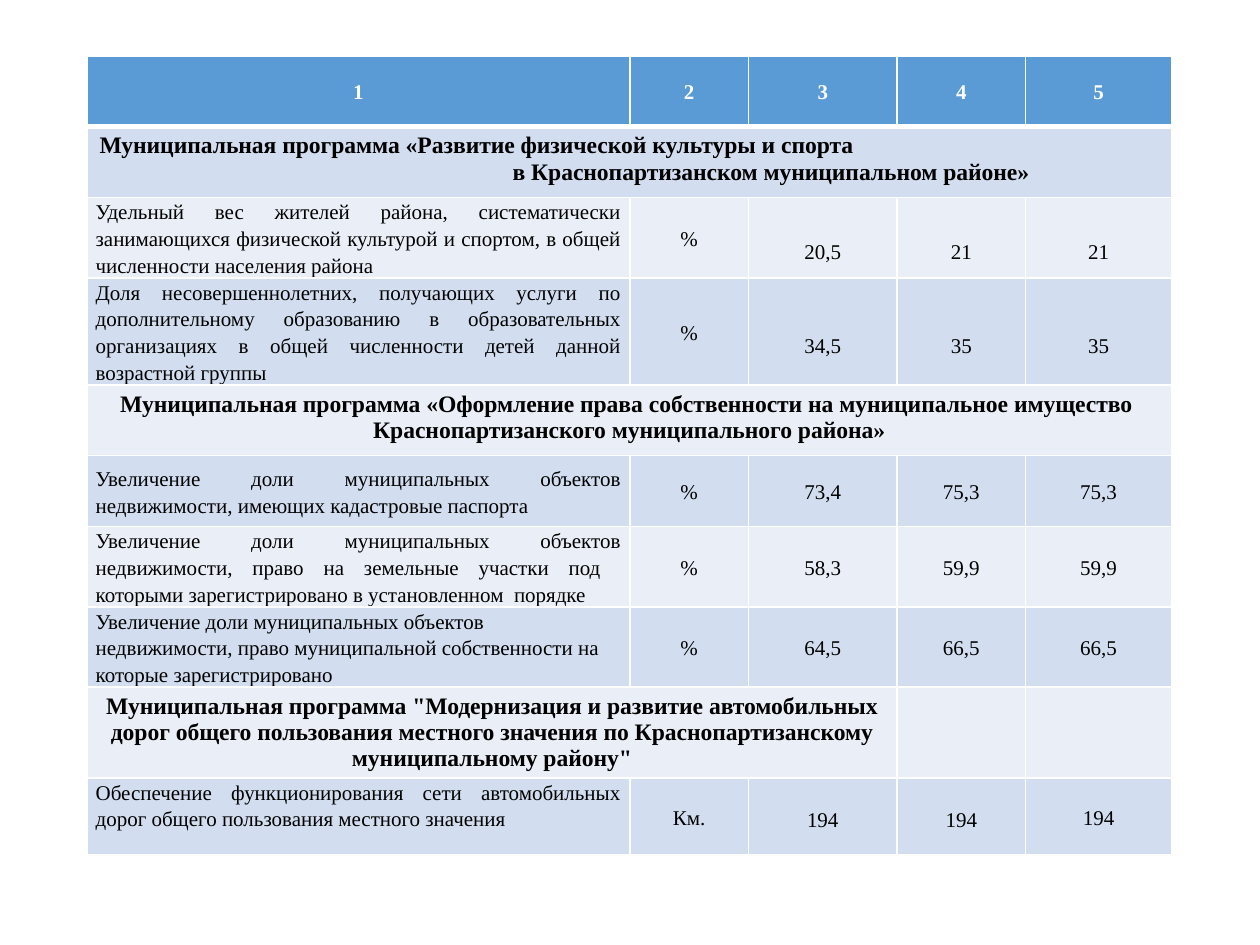
import pptx
import pptx.dml.color
import pptx.enum.text
import pptx.oxml.ns
import pptx.util
from lxml import etree

Pt = pptx.util.Pt
ALIGN = pptx.enum.text.PP_ALIGN
ANCHOR = pptx.enum.text.MSO_ANCHOR
LEFT, CENTER, JUST = ALIGN.LEFT, ALIGN.CENTER, ALIGN.JUSTIFY
TOP, MID = ANCHOR.TOP, ANCHOR.MIDDLE

WIDTHS = [310.3, 67.7, 85, 73.4, 83.5]
HIGH, LAST = 40.4, 44
DROP = 15.4
HEAD, DARK, LIGHT = "5B9BD5", "D2DEEF", "EAEFF7"

ROWS = [
    ("title", ["Муниципальная программа «Развитие физической культуры и спорта",
               "в Краснопартизанском муниципальном районе»"], 5, LEFT),
    ("data", ["Удельный вес жителей района, систематически занимающихся физической "
              "культурой и спортом, в общей численности населения района",
              "%", "20,5", "21", "21"], DROP, JUST),
    ("data", ["Доля несовершеннолетних, получающих услуги по дополнительному "
              "образованию в образовательных организациях в общей численности "
              "детей данной возрастной группы",
              "%", "34,5", "35", "35"], DROP, JUST),
    ("title", ["Муниципальная программа «Оформление права собственности на "
               "муниципальное имущество  Краснопартизанского муниципального района»"],
     5, CENTER),
    ("data", ["Увеличение доли муниципальных объектов недвижимости, имеющих "
              "кадастровые паспорта", "%", "73,4", "75,3", "75,3"], 0, JUST),
    ("data", ["Увеличение доли муниципальных объектов недвижимости, право на "
              "земельные участки под  которыми зарегистрировано в "
              "установленном  порядке", "%", "58,3", "59,9", "59,9"], 0, JUST),
    ("data", ["Увеличение доли муниципальных объектов недвижимости, право "
              "муниципальной собственности на которые зарегистрировано",
              "%", "64,5", "66,5", "66,5"], 0, LEFT),
    ("title", ["Муниципальная программа \"Модернизация и развитие автомобильных "
               "дорог общего пользования местного значения по Краснопартизанскому "
               "муниципальному району\""], 3, CENTER),
    ("data", ["Обеспечение функционирования сети автомобильных дорог общего "
              "пользования местного значения", "Км.", "194", "194", "194"], 0, JUST),
]


def paint(color):
    """Turn a hex string into a colour."""
    return pptx.dml.color.RGBColor.from_string(color)


def write(frame, lines, size=12, color="000000", bold=False, align=CENTER,
          space=1.15, shift=0):
    """Fill a text frame, indenting each line after the first by shift."""
    for num, line in enumerate(lines):
        para = frame.paragraphs[0] if num == 0 else frame.add_paragraph()
        para.alignment, para.line_spacing = align, space
        if num and shift:
            para._p.get_or_add_pPr().set("marL", str(Pt(shift)))
        run = para.add_run()
        run.text = line
        font = run.font
        font.name, font.size, font.bold = "Times New Roman", Pt(size), bold
        font.color.rgb = paint(color)


class Deck:
    """Hold the style and the current slide."""

    def __init__(self):
        """Start a deck with one blank slide."""
        self.show = pptx.Presentation()
        self.show.slide_width, self.show.slide_height = Pt(720), Pt(540)
        self.slide = self.show.slides.add_slide(self.show.slide_layouts[6])
        self.edge = "FFFFFF"

    def grid(self, left, top, widths, heights):
        """Add a table with the given columns and rows."""
        frame = self.slide.shapes.add_table(
            len(heights), len(widths), Pt(left), Pt(top),
            Pt(sum(widths)), Pt(sum(heights)))
        table = frame.table
        for col, width in zip(table.columns, widths):
            col.width = Pt(width)
        for row, height in zip(table.rows, heights):
            row.height = Pt(height)
        return table

    def cell(self, cell, fill, top=1, base=1):
        """Set the borders and the fill of a cell."""
        props = cell._tc.get_or_add_tcPr()
        for side, width in (("L", 1), ("R", 1), ("T", top), ("B", base)):
            line = etree.SubElement(props, pptx.oxml.ns.qn("a:ln" + side),
                                    w=str(Pt(width)))
            solid = etree.SubElement(line, pptx.oxml.ns.qn("a:solidFill"))
            etree.SubElement(solid, pptx.oxml.ns.qn("a:srgbClr"), val=self.edge)
        cell.fill.solid()
        cell.fill.fore_color.rgb = paint(fill)

    def text(self, cell, words, anchor=MID, drop=0, **style):
        """Write one value into a tight cell."""
        cell.margin_left = cell.margin_right = Pt(5)
        cell.margin_top, cell.margin_bottom = Pt(drop), 0
        cell.vertical_anchor = anchor
        write(cell.text_frame, [words], **style)

    def title(self, table, row, lines, span, align):
        """Write a programme name across several columns."""
        cell = table.cell(row, 0)
        cell.merge(table.cell(row, span - 1))
        write(cell.text_frame, lines, size=13.5, bold=True, align=align,
              space=1, shift=236)


def main():
    """Build the slide and save it."""
    deck = Deck()
    table = deck.grid(49.7, 32, WIDTHS, [HIGH] * len(ROWS) + [LAST])
    for col in range(len(WIDTHS)):
        cell = table.cell(0, col)
        deck.cell(cell, HEAD, base=3)
        deck.text(cell, str(col + 1), color="FFFFFF", bold=True, space=1.07)
    for row, (kind, words, extra, align) in enumerate(ROWS, 1):
        for col in range(len(WIDTHS)):
            deck.cell(table.cell(row, col), DARK if row % 2 else LIGHT,
                      top=3 if row == 1 else 1)
        if kind == "title":
            deck.title(table, row, words, extra, align)
            continue
        for col, word in enumerate(words):
            last = row == len(ROWS)
            high = last and col in (0, 2, 3)
            drop = extra if col > 1 else 0
            if high and col:
                drop = DROP
            deck.text(table.cell(row, col), word, anchor=TOP if high else MID,
                      drop=drop, align=CENTER if col else align)
    deck.show.save("out.pptx")


if __name__ == "__main__":
    main()
